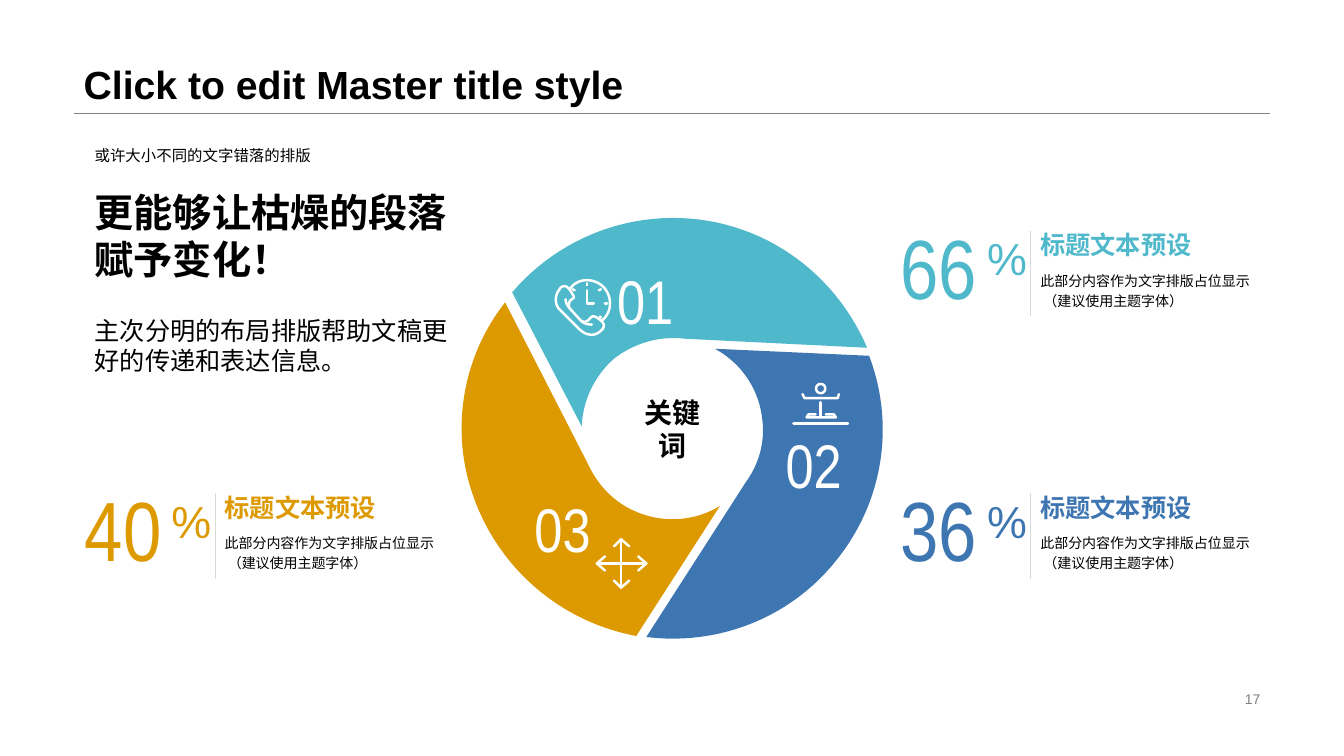
from dataclasses import dataclass

from lxml.etree import SubElement
from pptx import Presentation
from pptx.dml.color import RGBColor
from pptx.enum.shapes import MSO_CONNECTOR
from pptx.enum.text import MSO_ANCHOR, PP_ALIGN
from pptx.oxml.ns import qn
from pptx.util import Inches, Pt


@dataclass(frozen=True)
class Theme:
    teal: str = "4FB9CB"
    blue: str = "3E76B2"
    gold: str = "DD9A00"
    black: str = "000000"
    white: str = "FFFFFF"
    grey: str = "808080"
    rule: str = "D9D9D9"
    font: str = "Arial"
    narrow: str = "Arial Narrow"
    tiny: int = 10
    small: int = 11
    body: int = 18
    keyword: int = 20
    heading: int = 28
    percent: int = 32
    number: int = 44
    figure: int = 60


T = Theme()

# Content
TITLE = "Click to edit Master title style"
PAGE = "17"
KEYWORD = "关键词"
STAT_TITLE = "标题文本预设"
STAT_NOTE = "此部分内容作为文字排版占位显示\v （建议使用主题字体）"
STATS = [  # figure, colour, left, top
    ("36", T.blue, 8.93, 4.69),
    ("40", T.gold, 0.84, 4.69),
    ("66", T.teal, 8.93, 2.09),
]
INTRO = [  # text, size, bold, top, height
    ("或许大小不同的文字错落的排版", T.small, False, 1.39, 0.3),
    ("更能够让枯燥的段落赋予变化！", T.heading, True, 1.69, 1.28),
    ("主次分明的布局排版帮助文稿更好的传递和表达信息。", T.body, False, 2.97, 0.91),
]
NUMBERS = [  # text, box
    ("01", (6.01, 2.48, 0.78, 1)),
    ("02", (7.47, 4.15, 1.2, 0.9)),
    ("03", (4.98, 4.79, 1.2, 0.9)),
]

# Outlines in inches: M move, L line, C cubic curve, Z close
WEDGES = [
    (T.teal, "M 5.08 2.9 L 5.77 4.23 C 5.78 3.97 5.9 3.72 6.1 3.55 "
             "C 6.3 3.4 6.55 3.33 6.79 3.36 L 8.6 3.45 "
             "C 8.32 2.79 7.73 2.31 7.02 2.19 C 6.29 2.07 5.56 2.34 5.08 2.9 Z"),
    (T.gold, "M 5.01 3 L 5.83 4.6 C 5.94 4.84 6.13 5.02 6.37 5.1 "
             "C 6.63 5.19 6.91 5.16 7.14 5.02 L 6.31 6.31 "
             "C 5.46 6.15 4.8 5.5 4.62 4.66 C 4.5 4.08 4.64 3.47 5.01 3 Z"),
    (T.blue, "M 8.62 3.53 L 7.09 3.46 C 7.35 3.6 7.53 3.86 7.56 4.16 "
             "C 7.59 4.38 7.53 4.6 7.4 4.78 L 6.41 6.32 "
             "C 7.14 6.41 7.86 6.12 8.31 5.54 C 8.76 4.97 8.88 4.21 8.62 3.53 Z"),
]
PERSON = (
    "M 8.14 3.81 C 8.2 3.81 8.2 3.9 8.14 3.9 C 8.08 3.9 8.08 3.81 8.14 3.81 Z "
    "M 7.96 3.91 L 7.98 3.95 L 8.31 3.95 L 8.32 3.91 M 8.14 3.99 L 8.14 4.14 "
    "M 8.09 4.11 L 8.02 4.11 L 8 4.14 L 8.29 4.14 L 8.27 4.11 L 8.19 4.11 "
    "M 7.87 4.2 L 8.41 4.2")
ARROWS = (
    "M 5.92 5.59 L 6.41 5.59 M 6.16 5.35 L 6.16 5.83 "
    "M 6 5.52 L 5.92 5.59 L 6 5.66 M 6.33 5.52 L 6.41 5.59 L 6.33 5.66 "
    "M 6.09 5.42 L 6.16 5.35 L 6.24 5.42 M 6.09 5.76 L 6.16 5.83 L 6.24 5.76")
PHONE_CLOCK = (
    "M 5.59 2.84 C 5.63 2.83 5.66 2.89 5.68 2.92 C 5.7 2.95 5.69 2.96 5.67 2.97 "
    "C 5.64 2.99 5.63 3.04 5.66 3.07 L 5.76 3.18 C 5.79 3.2 5.82 3.2 5.86 3.15 "
    "C 5.88 3.13 5.9 3.14 5.92 3.15 C 5.96 3.18 6.01 3.21 5.98 3.26 "
    "L 5.95 3.29 C 5.9 3.33 5.85 3.33 5.79 3.3 L 5.75 3.27 L 5.55 3.07 "
    "C 5.5 3.02 5.5 2.93 5.55 2.87 C 5.56 2.85 5.58 2.84 5.59 2.84 Z "
    "M 5.61 2.97 C 5.61 3.01 5.64 3.05 5.66 3.07 "
    "M 5.76 3.18 C 5.79 3.21 5.83 3.22 5.87 3.22 "
    "M 5.65 2.87 C 5.69 2.81 5.75 2.78 5.82 2.78 "
    "C 5.95 2.78 6.05 2.88 6.05 3.01 C 6.05 3.08 6.02 3.14 5.97 3.18 "
    "M 5.82 2.88 L 5.82 3.01 L 5.89 3.01 M 5.82 2.81 L 5.82 2.83 "
    "M 6 3.01 L 6.02 3.01 M 5.94 2.88 L 5.96 2.87 M 5.95 3.14 L 5.96 3.15 "
    "M 5.68 2.87 L 5.7 2.88")
CURVE_STEPS = 24


def rgb(color):
    return RGBColor.from_string(color)


def contours(outline):
    """Turn an outline into a list of [points, closed] with curves sampled."""
    parts = []
    tokens = iter(outline.split())
    for op in tokens:
        if op == "Z":
            parts[-1][1] = True
            continue
        pts = [(float(next(tokens)), float(next(tokens)))
               for _ in range(3 if op == "C" else 1)]
        if op == "M":
            parts.append([pts, False])
        elif op == "L":
            parts[-1][0].extend(pts)
        else:
            a, (b, c, d) = parts[-1][0][-1], pts
            for i in range(1, CURVE_STEPS + 1):
                t = i / CURVE_STEPS
                u = 1 - t
                parts[-1][0].append(tuple(
                    u**3 * a[k] + 3 * u * u * t * b[k] + 3 * u * t * t * c[k] + t**3 * d[k]
                    for k in (0, 1)))
    return parts


def add_outline(slide, outline):
    builder = None
    for pts, closed in contours(outline):
        start, *rest = [(Inches(x), Inches(y)) for x, y in pts]
        if builder is None:
            builder = slide.shapes.build_freeform(*start)
        else:
            builder.move_to(*start)
        builder.add_line_segments(rest, close=closed)
    s = builder.convert_to_shape()
    s.shadow.inherit = False
    return s


def add_wedge(slide, color, outline):
    s = add_outline(slide, outline)
    s.fill.solid()
    s.fill.fore_color.rgb = rgb(color)
    s.line.fill.background()


def add_icon(slide, outline):
    s = add_outline(slide, outline)
    s.fill.background()
    s.line.color.rgb = rgb(T.white)
    s.line.width = Pt(1.75)
    s._element.spPr.find(qn("a:ln")).set("cap", "rnd")


def style(tf, text, size, color, bold=False, font=T.font, align=None, spacing=None):
    tf.text = text
    p = tf.paragraphs[0]
    p.alignment = align
    p.line_spacing = spacing
    for r in p.runs:
        r.font.size, r.font.bold, r.font.name = Pt(size), bold, font
        r.font.color.rgb = rgb(color)


def add_text(slide, box, text, size, color, wrap=False, inset=True,
             anchor=MSO_ANCHOR.MIDDLE, **look):
    tf = slide.shapes.add_textbox(*map(Inches, box)).text_frame
    tf.word_wrap = wrap
    tf.vertical_anchor = anchor
    if not inset:
        tf.margin_left = tf.margin_right = tf.margin_top = tf.margin_bottom = 0
    style(tf, text, size, color, **look)


def add_rule(slide, x1, y1, x2, y2, color):
    s = slide.shapes.add_connector(MSO_CONNECTOR.STRAIGHT, *map(Inches, (x1, y1, x2, y2)))
    s.line.color.rgb = rgb(color)
    s.line.width = Pt(0.25)
    SubElement(s._element.spPr, qn("a:effectLst"))


def add_stat(slide, figure, color, x, y):
    add_text(slide, (x, y, 1.05, 1.1), figure, T.figure, color, inset=False, font=T.narrow)
    add_text(slide, (x + 0.86, y + 0.2, 0.4, 0.54), "%", T.percent, color, inset=False)
    left = x + 1.29
    add_text(slide, (left, y + 0.53, 2.28, 0.61), STAT_NOTE, T.tiny, T.black,
             wrap=True, anchor=MSO_ANCHOR.TOP, spacing=1.2)
    add_text(slide, (left, y + 0.14, 2.28, 0.38), STAT_TITLE, T.body, color,
             anchor=MSO_ANCHOR.TOP, bold=True)
    add_rule(slide, left, y + 0.2, left, y + 1.05, T.rule)


def main():
    prs = Presentation()
    prs.slide_width, prs.slide_height = Inches(13.33), Inches(7.5)
    slide = prs.slides.add_slide(prs.slide_layouts[5])

    # Title, rule and page number
    title = slide.shapes.title
    title.left, title.top, title.width, title.height = map(Inches, (0.73, 0, 11.87, 1.12))
    title.text_frame.vertical_anchor = MSO_ANCHOR.BOTTOM
    style(title.text_frame, TITLE, T.heading, T.black, bold=True,
          align=PP_ALIGN.LEFT, spacing=0.9)
    add_rule(slide, 0.73, 1.12, 12.6, 1.12, T.grey)
    add_text(slide, (9.42, 6.82, 3.18, 0.23), PAGE, T.tiny, T.grey, wrap=True,
             align=PP_ALIGN.RIGHT)

    # Ring with icons, numbers and keyword
    for color, outline in WEDGES:
        add_wedge(slide, color, outline)
    for outline in (PERSON, ARROWS, PHONE_CLOCK):
        add_icon(slide, outline)
    for text, box in NUMBERS:
        add_text(slide, box, text, T.number, T.white, font=T.narrow, align=PP_ALIGN.CENTER)
    add_text(slide, (6.17, 3.88, 1, 0.75), KEYWORD, T.keyword, T.black, bold=True,
             align=PP_ALIGN.CENTER)

    # Percentages and introduction
    for stat in STATS:
        add_stat(slide, *stat)
    for text, size, bold, top, height in INTRO:
        add_text(slide, (0.84, top, 3.83, height), text, size, T.black, wrap=True, bold=bold)

    prs.save("out.pptx")


if __name__ == "__main__":
    main()
